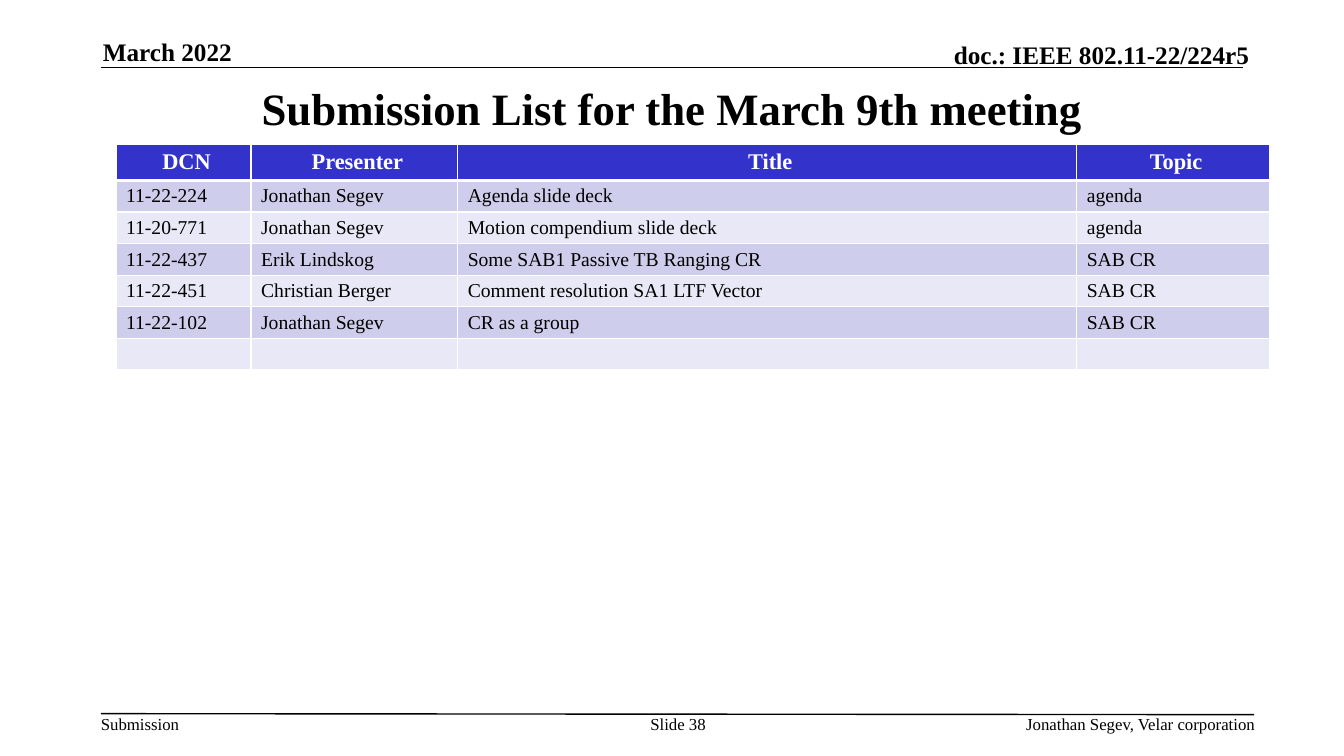
from lxml.etree import SubElement
from pptx import Presentation
from pptx.dml.color import RGBColor
from pptx.enum.shapes import MSO_CONNECTOR
from pptx.enum.text import MSO_ANCHOR as ANCHOR, PP_ALIGN as ALIGN
from pptx.oxml.ns import qn
from pptx.util import Inches, Pt

FONT = "Times New Roman"
BLACK, WHITE, HEADER_BLUE = "000000", "FFFFFF", "3333CC"
BANDS = ["CECEEC", "E8E8F6"]
COL_WIDTHS = [1.34, 2.05, 6.14, 1.91]
HEADER_HEIGHT, ROW_HEIGHT = 0.36, 0.31
HEADINGS = ["DCN", "Presenter", "Title", "Topic"]
SUBMISSIONS = [
    ["11-22-224", "Jonathan Segev", "Agenda slide deck", "agenda"],
    ["11-20-771", "Jonathan Segev", "Motion compendium slide deck", "agenda"],
    ["11-22-437", "Erik Lindskog", "Some SAB1 Passive TB Ranging CR", "SAB CR"],
    ["11-22-451", "Christian Berger", "Comment resolution SA1 LTF Vector", "SAB CR"],
    ["11-22-102", "Jonathan Segev", "CR as a group", "SAB CR"],
    ["", "", "", ""],
]


def rgb(color):
    return RGBColor.from_string(color)


def write(tf, text, size, bold=False, color=BLACK, align=ALIGN.LEFT):
    p = tf.paragraphs[0]
    p.alignment = align
    if not text:
        # Keeps an empty cell as low as its filled neighbours
        p._p.get_or_add_endParaRPr().set("sz", str(size * 100))
        return
    r = p.add_run()
    r.text = text
    r.font.name = FONT
    r.font.size = Pt(size)
    r.font.bold = bold
    r.font.color.rgb = rgb(color)


def set_margins(obj, left, top, right, bottom):
    obj.margin_left, obj.margin_top = Inches(left), Inches(top)
    obj.margin_right, obj.margin_bottom = Inches(right), Inches(bottom)


def add_label(s, box, text, size, bold=False, align=ALIGN.LEFT, anchor=ANCHOR.TOP):
    tf = s.shapes.add_textbox(*map(Inches, box)).text_frame
    tf.word_wrap = True
    tf.vertical_anchor = anchor
    set_margins(tf, 0, 0, 0, 0)
    write(tf, text, size, bold, align=align)


def add_rule(s, x1, y1, x2, y2):
    line = s.shapes.add_connector(MSO_CONNECTOR.STRAIGHT, *map(Inches, (x1, y1, x2, y2)))
    line.line.color.rgb = rgb(BLACK)
    line.line.width = Pt(1)
    SubElement(line._element.spPr, qn("a:effectLst"))


def add_title(s, text):
    title = s.shapes.title
    title.left, title.top = Inches(1), Inches(0.75)
    title.width, title.height = Inches(11.33), Inches(0.64)
    tf = title.text_frame
    tf.word_wrap = True
    tf.vertical_anchor = ANCHOR.MIDDLE
    set_margins(tf, 0.1, 0.05, 0.1, 0.05)
    write(tf, text, 32, True, align=ALIGN.CENTER)


def set_borders(cell, widths):
    tc_pr = cell._tc.get_or_add_tcPr()
    for side, width in widths.items():
        ln = SubElement(tc_pr, qn(f"a:ln{side}"), w=str(Pt(width)))
        fill = SubElement(ln, qn("a:solidFill"))
        SubElement(fill, qn("a:srgbClr"), val=WHITE)


def format_cell(cell, text, row):
    header = row == 0
    set_borders(cell, {"L": 1, "R": 1, "T": 3 if row == 1 else 1, "B": 3 if header else 1})
    cell.fill.solid()
    cell.fill.fore_color.rgb = rgb(HEADER_BLUE if header else BANDS[(row - 1) % 2])
    cell.vertical_anchor = ANCHOR.MIDDLE
    set_margins(cell, 0.1, 0.04, 0.04 if header else 0.1, 0.04)
    if header:
        write(cell.text_frame, text, 16, True, WHITE, ALIGN.CENTER)
    else:
        write(cell.text_frame, text, 14)


def add_submission_table(s):
    rows = [HEADINGS] + SUBMISSIONS
    height = HEADER_HEIGHT + ROW_HEIGHT * len(SUBMISSIONS)
    table = s.shapes.add_table(
        len(rows), len(HEADINGS), Inches(1.15), Inches(1.43),
        Inches(sum(COL_WIDTHS)), Inches(height)).table
    for column, width in zip(table.columns, COL_WIDTHS):
        column.width = Inches(width)
    for i, texts in enumerate(rows):
        table.rows[i].height = Inches(ROW_HEIGHT if i else HEADER_HEIGHT)
        for j, text in enumerate(texts):
            format_cell(table.cell(i, j), text, i)


def main():
    prs = Presentation()
    prs.slide_width, prs.slide_height = Inches(13.33), Inches(7.5)
    s = prs.slides.add_slide(prs.slide_layouts[5])

    # Header
    add_rule(s, 1, 0.67, 12.33, 0.67)
    add_label(s, (1.02, 0.36, 2.73, 0.3), "March 2022", 18, True, anchor=ANCHOR.BOTTOM)
    add_label(s, (7.29, 0.39, 5.1, 0.3), "doc.: IEEE 802.11-22/224r5", 18, True,
              ALIGN.RIGHT, ANCHOR.BOTTOM)

    # Title and table
    add_title(s, "Submission List for the March 9th meeting")
    add_submission_table(s)

    # Footer
    add_rule(s, 1, 7.08, 12.44, 7.09)
    add_label(s, (1, 7.08, 0.79, 0.2), "Submission", 12)
    add_label(s, (6.34, 7.08, 0.77, 0.4), "Slide 38", 12, align=ALIGN.CENTER)
    add_label(s, (7.81, 7.08, 4.64, 0.2), "Jonathan Segev, Velar corporation", 12,
              align=ALIGN.RIGHT)

    prs.save("out.pptx")


if __name__ == "__main__":
    main()
